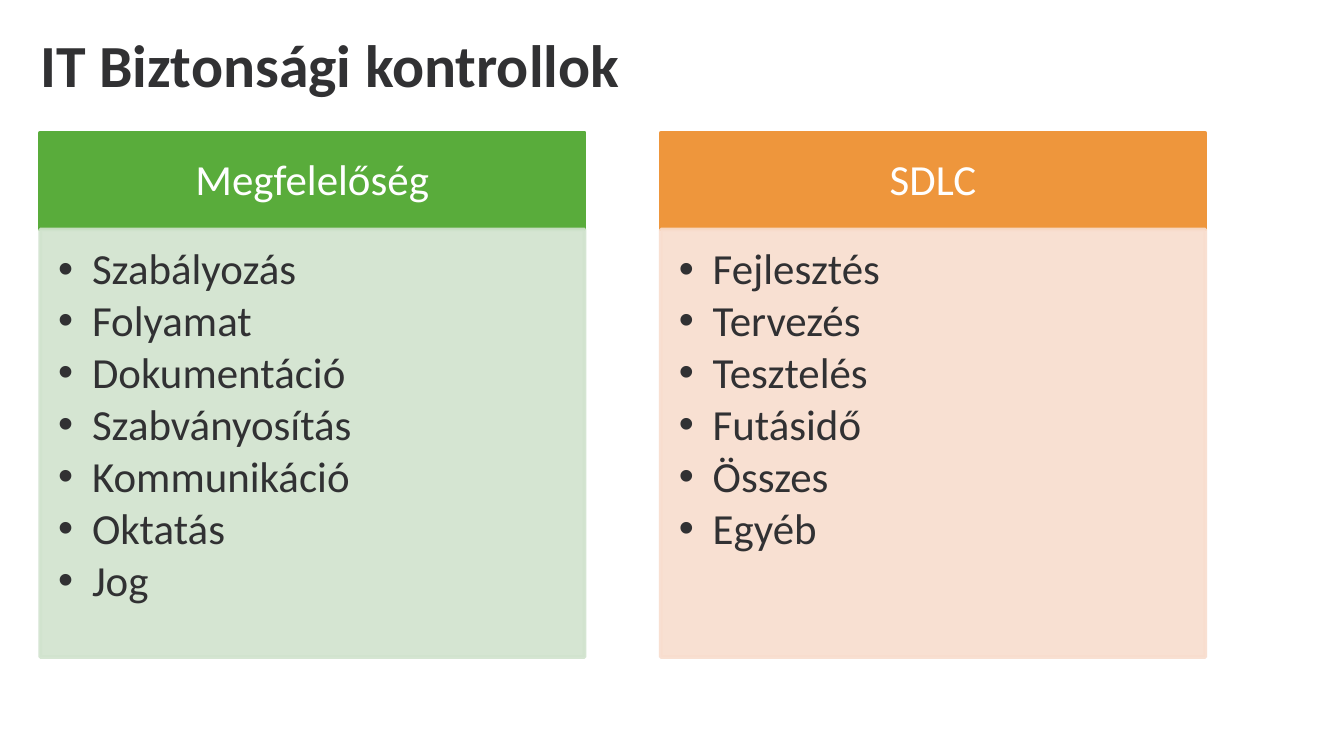
from lxml import etree
from pptx import Presentation
from pptx.dml.color import RGBColor
from pptx.enum.shapes import MSO_SHAPE as Preset
from pptx.enum.text import MSO_ANCHOR as Anchor, PP_ALIGN as Align
from pptx.oxml.ns import qn
from pptx.util import Cm, Pt

INK, WHITE = "313133", "FFFFFF"
COLUMNS = [
    ("Megfelelőség", "59AC3B", "D1E3CE",
     ["Szabályozás", "Folyamat", "Dokumentáció", "Szabványosítás",
      "Kommunikáció", "Oktatás", "Jog"]),
    ("SDLC", "EE963C", "F8DDCE",
     ["Fejlesztés", "Tervezés", "Tesztelés", "Futásidő", "Összes", "Egyéb"]),
]


def set_color(target, value):
    target.rgb = RGBColor.from_string(value)


def add_bullet(para, indent):
    props = para._p.get_or_add_pPr()
    props.set("marL", str(indent))
    props.set("indent", str(-indent))
    etree.SubElement(props, qn("a:buFont")).set("typeface", "Arial")
    etree.SubElement(props, qn("a:buChar")).set("char", "•")


def write_text(box, lines, size=23, color=INK, bold=False, align=Align.LEFT,
               anchor=Anchor.TOP, margins=(0, 0, 0, 0), spacing=0.9, after=0,
               bullets=False):
    frame = box.text_frame
    frame.word_wrap = True
    frame.vertical_anchor = anchor
    (frame.margin_left, frame.margin_top,
     frame.margin_right, frame.margin_bottom) = map(Cm, margins)
    for index, line in enumerate(lines):
        para = frame.paragraphs[0] if index == 0 else frame.add_paragraph()
        para.alignment = align
        para.line_spacing = spacing
        para.space_after = Pt(after)
        if bullets:
            add_bullet(para, Cm(0.64))
        span = para.add_run()
        span.text = line
        span.font.name = "Calibri"
        span.font.size = Pt(size)
        span.font.bold = bold
        set_color(span.font.color, color)


def add_panel(page, left, top, width, height, color, opacity=100):
    panel = page.shapes.add_shape(
        Preset.RECTANGLE, Cm(left), Cm(top), Cm(width), Cm(height))
    panel.shadow.inherit = False
    panel.fill.solid()
    set_color(panel.fill.fore_color, color)
    panel.line.width = Pt(2)
    set_color(panel.line.color, color)
    if opacity < 100:
        for paint in panel._element.spPr.iter(qn("a:srgbClr")):
            etree.SubElement(paint, qn("a:alpha")).set("val", str(opacity * 1000))
    return panel


def add_title(page, left, top, width, height, text):
    box = page.shapes.add_textbox(Cm(left), Cm(top), Cm(width), Cm(height))
    write_text(box, [text], size=32, bold=True, spacing=0.8)


def add_column(page, left, top, width, height, heading, strong, pale, items):
    head_height = 1.83
    # Heading band
    head = add_panel(page, left, top, width, head_height, strong)
    write_text(head, [heading], color=WHITE, align=Align.CENTER,
               anchor=Anchor.MIDDLE, margins=(0.46, 0.25, 0.46, 0.25), after=8)
    # Bulleted list
    body = add_panel(page, left, top + head_height, width,
                     height - head_height, pale, opacity=90)
    write_text(body, items, margins=(0.34, 0.34, 0.46, 0.51), after=3,
               bullets=True)


def main():
    deck = Presentation()
    deck.slide_width, deck.slide_height = Cm(25.4), Cm(14.29)
    page = deck.slides.add_slide(deck.slide_layouts[6])
    margin, width, gap = 0.76, 10.29, 1.44
    add_title(page, margin, 0.79, 22.45, 1.14, "IT Biztonsági kontrollok")
    for index, column in enumerate(COLUMNS):
        add_column(page, margin + index * (width + gap), 2.51, width, 9.91, *column)
    deck.save("out.pptx")


if __name__ == "__main__":
    main()
